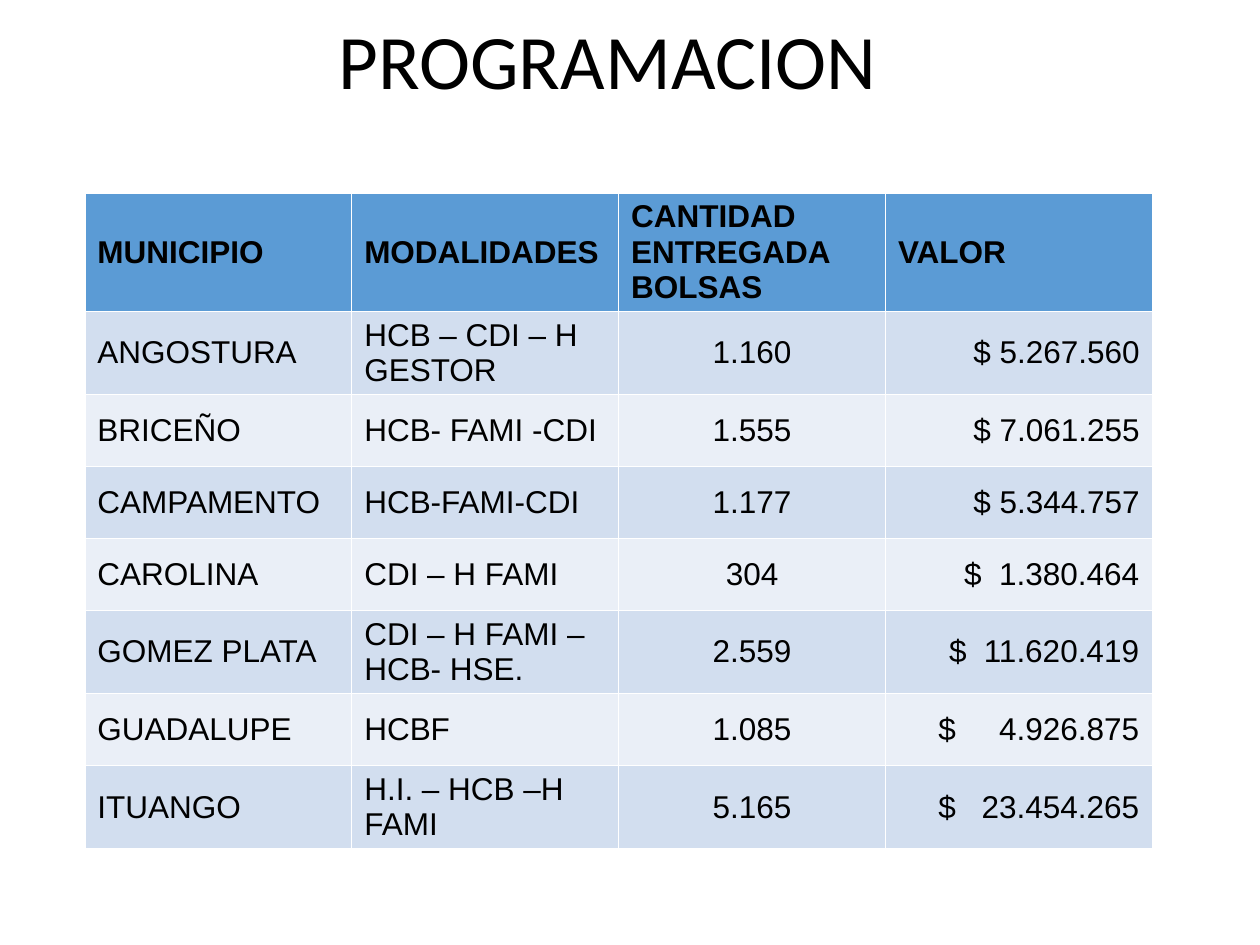
from pptx import Presentation
from pptx.dml.color import RGBColor
from pptx.enum.text import MSO_ANCHOR as Anchor, PP_ALIGN as Align
from pptx.oxml.ns import qn
from pptx.util import Cm, Pt
from lxml.etree import SubElement

BLACK = RGBColor(0x00, 0x00, 0x00)
HEADER_BLUE = RGBColor(0x5B, 0x9B, 0xD5)
BAND_DARK = RGBColor(0xD2, 0xDE, 0xEF)
BAND_LIGHT = RGBColor(0xEA, 0xEF, 0xF7)

COLUMN_WIDTH = Cm(5.38)
ROW_HEIGHT = Cm(1.45)
VALUE_EDGE = Cm(4.86)

HEADERS = ["MUNICIPIO", "MODALIDADES", "CANTIDAD ENTREGADA BOLSAS", "VALOR"]
ALIGNMENTS = [Align.LEFT, Align.LEFT, Align.CENTER, Align.RIGHT]
# The last item is the place of the $ sign in cm, or None when it is next to the amount.
DELIVERIES = [
    ("ANGOSTURA", "HCB – CDI – H GESTOR", "1.160", "5.267.560", None),
    ("BRICEÑO", "HCB- FAMI -CDI", "1.555", "7.061.255", None),
    ("CAMPAMENTO", "HCB-FAMI-CDI", "1.177", "5.344.757", None),
    ("CAROLINA", "CDI – H FAMI", "304", "1.380.464", 1.33),
    ("GOMEZ PLATA", "CDI – H FAMI –HCB- HSE.", "2.559", "11.620.419", 1.03),
    ("GUADALUPE", "HCBF", "1.085", "4.926.875", 0.81),
    ("ITUANGO", "H.I. – HCB –H FAMI", "5.165", "23.454.265", 0.81),
]


def write_text(frame, text, font="Arial", size=18, bold=False, align=Align.LEFT,
               line_spacing=None, tabs=()):
    """Fill the first paragraph; tabs holds (position, alignment code) pairs."""
    paragraph = frame.paragraphs[0]
    paragraph.text = text
    paragraph.alignment = align
    if line_spacing:
        paragraph.line_spacing = line_spacing
    if tabs:
        tab_list = SubElement(paragraph._p.get_or_add_pPr(), qn("a:tabLst"))
        for position, code in tabs:
            SubElement(tab_list, qn("a:tab"), pos=str(position), algn=code)
    for run in paragraph.runs:
        run.font.name = font
        run.font.size = Pt(size)
        run.font.bold = bold
        run.font.color.rgb = BLACK


def add_title(slide, text):
    title = slide.shapes.title
    title.left, title.top = Cm(1.3), Cm(0.33)
    title.width, title.height = Cm(21.9), Cm(3.68)
    title.text_frame.vertical_anchor = Anchor.TOP
    write_text(title.text_frame, text, font="Calibri", size=44,
               align=Align.CENTER, line_spacing=0.9)


def fill_cell(cell, text, color, **text_format):
    cell.fill.solid()
    cell.fill.fore_color.rgb = color
    cell.vertical_anchor = Anchor.MIDDLE
    write_text(cell.text_frame, text, **text_format)


def fill_value_cell(cell, amount, sign_position, color):
    """Right-align the amount, with its $ sign beside it or at a tab stop."""
    if sign_position is None:
        fill_cell(cell, f"$ {amount}", color, align=Align.RIGHT)
    else:
        tabs = [(Cm(sign_position), "l"), (VALUE_EDGE, "r")]
        fill_cell(cell, f"\t$\t{amount}", color, tabs=tabs)


def add_delivery_table(slide):
    row_count, column_count = len(DELIVERIES) + 1, len(HEADERS)
    table = slide.shapes.add_table(
        row_count, column_count, Cm(1.71), Cm(3.89),
        COLUMN_WIDTH * column_count, ROW_HEIGHT * row_count).table
    table.horz_banding = False
    for column in table.columns:
        column.width = COLUMN_WIDTH
    for row in table.rows:
        row.height = ROW_HEIGHT

    for column, header in enumerate(HEADERS):
        fill_cell(table.cell(0, column), header, HEADER_BLUE, bold=True)
    for row, (*texts, amount, sign_position) in enumerate(DELIVERIES, start=1):
        color = BAND_DARK if row % 2 else BAND_LIGHT
        for column, text in enumerate(texts):
            fill_cell(table.cell(row, column), text, color, align=ALIGNMENTS[column])
        fill_value_cell(table.cell(row, column_count - 1), amount, sign_position, color)


def main():
    presentation = Presentation()
    presentation.slide_width, presentation.slide_height = Cm(25.4), Cm(19.05)
    slide = presentation.slides.add_slide(presentation.slide_layouts[5])
    add_title(slide, "PROGRAMACION")
    add_delivery_table(slide)
    presentation.save("out.pptx")


if __name__ == "__main__":
    main()
